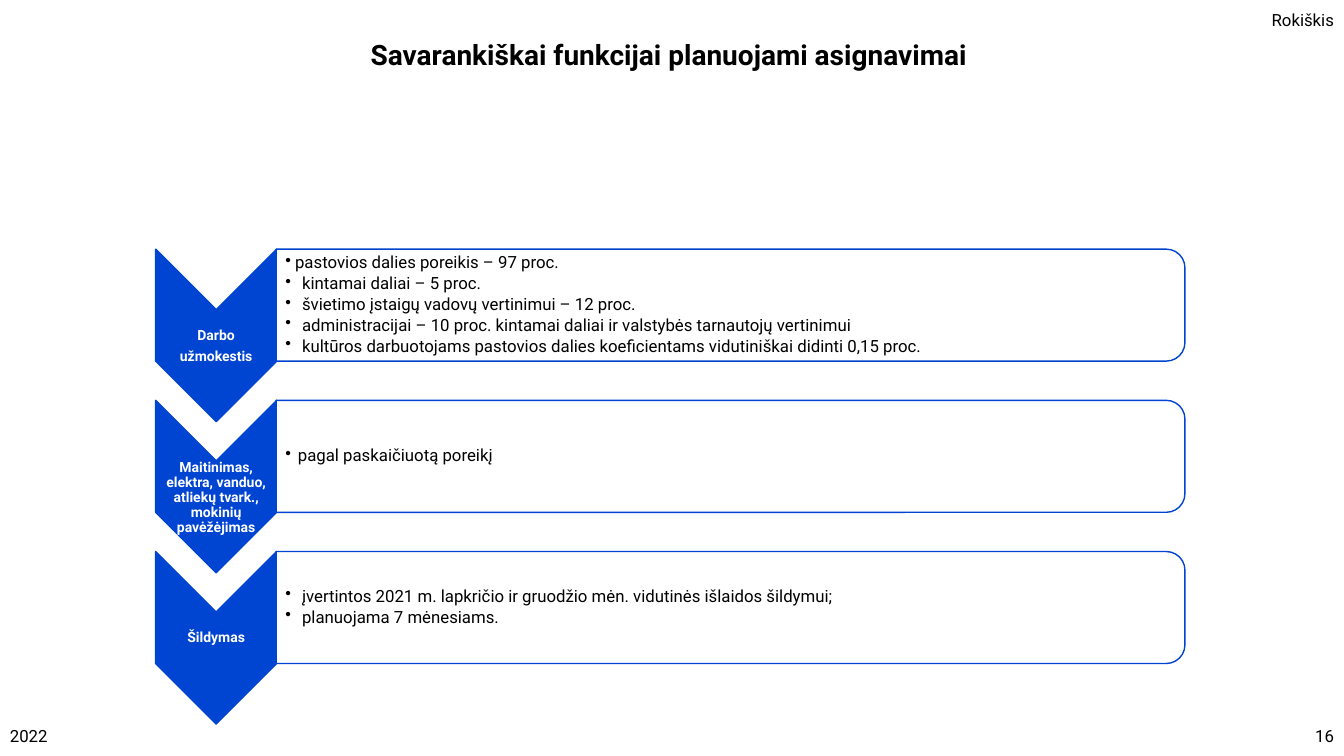
from lxml.etree import SubElement
from pptx import Presentation
from pptx.dml.color import RGBColor
from pptx.enum.shapes import MSO_SHAPE as Shape
from pptx.enum.text import MSO_ANCHOR as Anchor, PP_ALIGN as Align
from pptx.oxml.ns import qn
from pptx.util import Pt

BLUE = RGBColor(0x00, 0x44, 0xD2)
BLACK = RGBColor(0x00, 0x00, 0x00)
WHITE = RGBColor(0xFF, 0xFF, 0xFF)

PITCH = 108  # distance from one step to the next
SMALL_INSETS = (1, 1, 1, 1)

# label paragraphs, downward shift of the label, (bullet indent, text) items
STEPS = [
    (["Darbo", "užmokestis"], 8, [
        (7, "pastovios dalies poreikis – 97 proc."),
        (12, "kintamai daliai – 5 proc."),
        (12, "švietimo įstaigų vadovų vertinimui – 12 proc."),
        (12, "administracijai – 10 proc. kintamai daliai ir valstybės tarnautojų vertinimui"),
        (12, "kultūros darbuotojams pastovios dalies koeficientams vidutiniškai didinti 0,15 proc."),
    ]),
    (["Maitinimas, elektra, vanduo, atliekų tvark., mokinių pavėžėjimas"], 8, [
        (9, "pagal paskaičiuotą poreikį"),
    ]),
    (["Šildymas"], 0, [
        (12, "įvertintos 2021 m. lapkričio ir gruodžio mėn. vidutinės išlaidos šildymui;"),
        (12, "planuojama 7 mėnesiams."),
    ]),
]

deck = Presentation()
deck.slide_width, deck.slide_height = Pt(960), Pt(540)
page = deck.slides.add_slide(deck.slide_layouts[6])


def add_text(bounds, lines, para_format, font_format, insets=(7.2, 3.6, 7.2, 3.6)):
    """Add a wrapped, vertically centred text box and return its paragraphs."""
    frame = page.shapes.add_textbox(*map(Pt, bounds)).text_frame
    frame.word_wrap = True
    frame.vertical_anchor = Anchor.MIDDLE
    for side, inset in zip(("left", "top", "right", "bottom"), insets):
        setattr(frame, f"margin_{side}", Pt(inset))
    frame.text = "\n".join(lines)
    for para in frame.paragraphs:
        for name, value in para_format.items():
            setattr(para, name, value)
        for span in para.runs:
            span.font.name = "Roboto"
            span.font.color.rgb = BLACK
            for name, value in font_format.items():
                if name == "color":
                    span.font.color.rgb = value
                else:
                    setattr(span.font, name, value)
    return frame.paragraphs


def add_turned_shape(kind, center, size, fill):
    """Add a shape turned by 90 degrees; size is given before the turn."""
    (x, y), (width, height) = center, size
    box = page.shapes.add_shape(
        kind, Pt(x - width / 2), Pt(y - height / 2), Pt(width), Pt(height))
    box.rotation = 90
    box.shadow.inherit = False
    box.fill.solid()
    box.fill.fore_color.rgb = fill
    box.line.color.rgb = BLUE
    box.line.width = Pt(1)
    return box


small = {"size": Pt(12)}
add_text((785.5, 3.6, 174.5, 21.6), ["Rokiškis"], {"alignment": Align.RIGHT}, small)
add_text((0, 511.2, 216, 28.8), ["2022"], {}, small)
add_text((172.8, 12.2, 610, 52.6), ["Savarankiškai funkcijai planuojami asignavimai"],
         {"alignment": Align.CENTER}, {"size": Pt(20), "bold": True})
add_text((744, 511.2, 216, 28.8), ["16"], {"alignment": Align.RIGHT}, small)

for index, (label, label_shift, items) in enumerate(STEPS):
    offset = index * PITCH

    add_turned_shape(Shape.CHEVRON, (154.4, 239.6 + offset), (123.2, 86.4), BLUE)
    add_text((111.2, 221.2 + label_shift + offset, 86.4, 36.8), label,
             {"alignment": Align.CENTER, "line_spacing": 0.9, "space_after": Pt(3.7)},
             {"size": Pt(10), "bold": True, "color": WHITE}, SMALL_INSETS)

    add_turned_shape(Shape.ROUND_2_SAME_RECTANGLE, (521.8, 218 + offset), (80, 649.2), WHITE)
    bullets = add_text((197.4, 181.6 + offset, 645, 72.6), [text for _, text in items],
                       {"line_spacing": 0.9, "space_after": Pt(2)}, small, (6.4, 1, 1, 1))
    for para, (indent, _) in zip(bullets, items):
        properties = para._p.get_or_add_pPr()
        properties.set("marL", str(Pt(indent)))
        properties.set("indent", str(-Pt(indent)))
        SubElement(properties, qn("a:buChar"), char="•")

deck.save("out.pptx")
